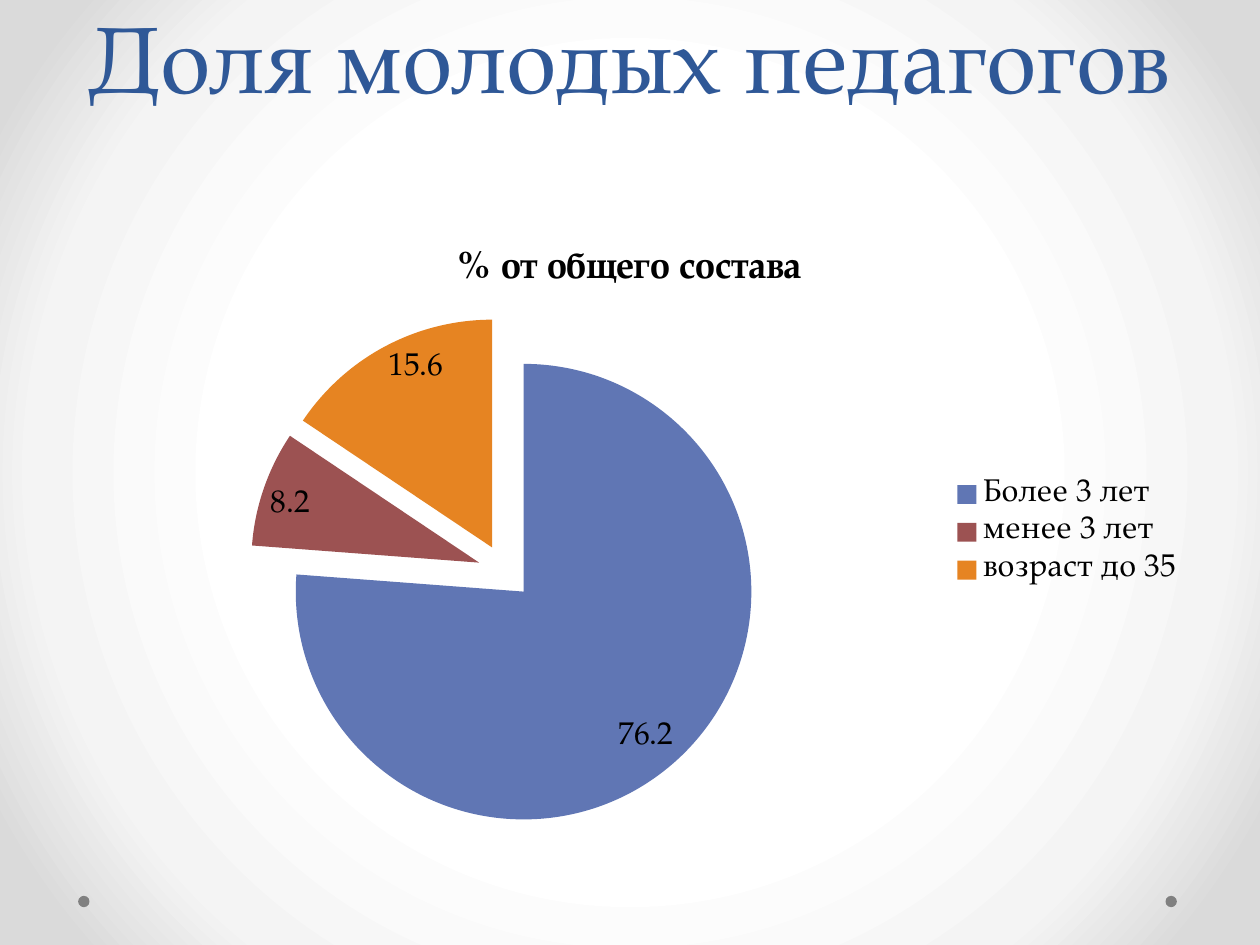
from pptx import Presentation
from pptx.chart.data import CategoryChartData
from pptx.dml.color import RGBColor
from pptx.enum.chart import XL_CHART_TYPE as ChartType
from pptx.enum.chart import XL_LABEL_POSITION as LabelPosition
from pptx.enum.chart import XL_LEGEND_POSITION as LegendPosition
from pptx.enum.shapes import MSO_SHAPE as Shape
from pptx.enum.text import MSO_ANCHOR as Anchor
from pptx.enum.text import MSO_AUTO_SIZE as AutoSize
from pptx.enum.text import PP_ALIGN as Align
from pptx.oxml import parse_xml
from pptx.oxml.ns import nsdecls, qn
from pptx.util import Inches, Pt

FONT = "TeX Gyre Pagella"
NAVY = RGBColor(0x2F, 0x58, 0x97)
BLACK = RGBColor(0x00, 0x00, 0x00)
GREY = RGBColor(0x80, 0x80, 0x80)
BLUE = RGBColor(0x60, 0x76, 0xB4)
RED = RGBColor(0x9C, 0x52, 0x52)
ORANGE = RGBColor(0xE6, 0x84, 0x22)
GLOW = [
    (50, RGBColor(0xFF, 0xFF, 0xFF)),
    (76, RGBColor(0xF4, 0xF4, 0xF4)),
    (92, RGBColor(0xDA, 0xDA, 0xDA)),
]
SHARES = [
    ("Более 3 лет", 76.2, BLUE),
    ("менее 3 лет", 8.2, RED),
    ("возраст до 35", 15.6, ORANGE),
]
CHART_TITLE = "% от общего состава"


def set_radial_background(page, stops):
    stop_xml = "".join(
        f'<a:gs pos="{percent * 1000}"><a:srgbClr val="{color}"/></a:gs>'
        for percent, color in stops
    )
    background = parse_xml(
        f'<p:bg {nsdecls("p", "a")}><p:bgPr><a:gradFill rotWithShape="1">'
        f"<a:gsLst>{stop_xml}</a:gsLst>"
        '<a:path path="circle">'
        '<a:fillToRect l="50000" t="50000" r="50000" b="50000"/></a:path>'
        "</a:gradFill><a:effectLst/></p:bgPr></p:bg>"
    )
    page.element.find(qn("p:cSld")).insert(0, background)


def add_dot(page, left):
    dot = page.shapes.add_shape(
        Shape.OVAL, Inches(left), Inches(7.11), Inches(0.09), Inches(0.09)
    )
    dot.shadow.inherit = False
    dot.fill.solid()
    dot.fill.fore_color.rgb = GREY
    dot.line.fill.background()


def style_font(font, size, color, bold=False):
    font.name = FONT
    font.size = Pt(size)
    font.color.rgb = color
    font.bold = bold


def fill_title(page, text):
    box = page.shapes.title
    box.left, box.top = Inches(0.5), Inches(0)
    box.width, box.height = Inches(9), Inches(1.75)
    frame = box.text_frame
    frame.word_wrap = True
    frame.auto_size = AutoSize.NONE
    frame.vertical_anchor = Anchor.TOP
    frame.margin_top = Inches(0.09)
    para = frame.paragraphs[0]
    para.alignment = Align.CENTER
    para.line_spacing = Pt(58)
    span = para.add_run()
    span.text = text
    style_font(span.font, 54, NAVY)


def add_share_pie(page):
    data = CategoryChartData()
    data.categories = [name for name, _, _ in SHARES]
    data.add_series(CHART_TITLE, [value for _, value, _ in SHARES])
    chart = page.shapes.add_chart(
        ChartType.PIE, Inches(0.5), Inches(1.75), Inches(9), Inches(4.95), data
    ).chart
    style_font(chart.font, 18, BLACK)

    chart.has_title = True
    span = chart.chart_title.text_frame.paragraphs[0].add_run()
    span.text = CHART_TITLE
    style_font(span.font, 21.6, BLACK, bold=True)

    chart.has_legend = True
    chart.legend.position = LegendPosition.RIGHT
    chart.legend.include_in_layout = False

    plot = chart.plots[0]
    plot.vary_by_categories = True
    series = plot.series[0]
    explosion = parse_xml(f'<c:explosion {nsdecls("c")} val="12"/>')
    series._element.find(qn("c:tx")).addnext(explosion)
    for index, (_, _, color) in enumerate(SHARES):
        fill = series.points[index].format.fill
        fill.solid()
        fill.fore_color.rgb = color

    plot.has_data_labels = True
    labels = plot.data_labels
    labels.show_value = True
    labels.show_percentage = False
    labels.position = LabelPosition.INSIDE_END
    style_font(labels.font, 18, BLACK)


def main():
    deck = Presentation()
    deck.slide_width, deck.slide_height = Inches(10), Inches(7.5)
    page = deck.slides.add_slide(deck.slide_layouts[5])
    set_radial_background(page, GLOW)
    for left in (9.25, 0.62):
        add_dot(page, left)
    fill_title(page, "Доля молодых педагогов")
    add_share_pie(page)
    deck.save("out.pptx")


if __name__ == "__main__":
    main()
